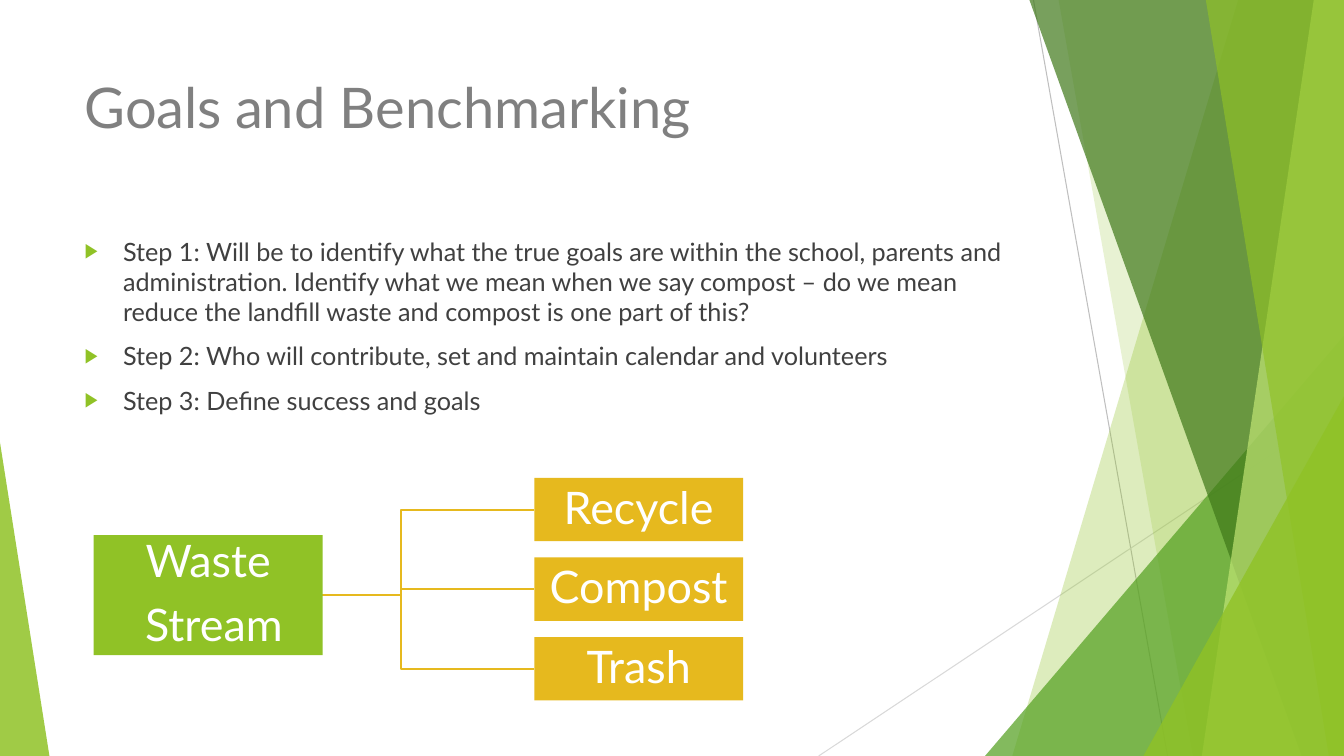
from dataclasses import dataclass

from lxml.etree import SubElement
from pptx import Presentation
from pptx.dml.color import RGBColor
from pptx.enum.shapes import MSO_CONNECTOR as Connector, MSO_SHAPE as Preset
from pptx.enum.text import MSO_ANCHOR as Anchor, MSO_AUTO_SIZE as AutoSize, PP_ALIGN as Align
from pptx.oxml.ns import qn
from pptx.shapes.autoshape import Shape
from pptx.slide import Slide
from pptx.text.text import TextFrame, _Paragraph as Paragraph
from pptx.util import Inches, Pt

FONT = "Lato"
WHITE = RGBColor(0xFF, 0xFF, 0xFF)
GREEN = RGBColor(0x90, 0xC2, 0x26)
MID_GREEN = RGBColor(0x54, 0xA0, 0x21)
DARK_GREEN = RGBColor(0x3F, 0x78, 0x19)
PALE_GREEN = RGBColor(0xC0, 0xE4, 0x74)
GOLD = RGBColor(0xE6, 0xB9, 0x1E)
TITLE_GRAY = RGBColor(0x80, 0x80, 0x80)
TEXT_GRAY = RGBColor(0x40, 0x40, 0x40)
LINE_GRAY = RGBColor(0xBF, 0xBF, 0xBF)
LIGHT_GRAY = RGBColor(0xD9, 0xD9, 0xD9)

WIDTH, HEIGHT = 13.33, 7.5
Point = tuple[float, float]


@dataclass(frozen=True)
class Ray:
    start: Point
    end: Point
    color: RGBColor


@dataclass(frozen=True)
class Band:
    """A facet from the top edge to the bottom edge, bounded by the right edge."""
    top_x: float
    bottom_x: float
    color: RGBColor
    opacity: int


@dataclass(frozen=True)
class Corner:
    """A right triangle on the bottom edge; apex 0 is left, 1 is right."""
    left: float
    top: float
    width: float
    apex: int
    color: RGBColor
    opacity: int


@dataclass(frozen=True)
class Box:
    left: float
    top: float
    width: float
    height: float
    color: RGBColor
    lines: tuple[str, ...]


RAYS = [
    Ray((10.25, 0), (11.58, HEIGHT), LINE_GRAY),
    Ray((WIDTH, 4.03), (8.12, HEIGHT), LIGHT_GRAY),
]
FACETS = [
    Band(12.28, 10.04, GREEN, 30),
    Band(10.5, 11.83, GREEN, 20),
    Corner(9.77, 3.33, 3.56, 1, MID_GREEN, 72),
    Band(10.21, 12.91, DARK_GREEN, 70),
    Band(13.03, 11.92, PALE_GREEN, 70),
    Band(11.96, 13.18, GREEN, 65),
    Corner(11.34, 3.93, 1.99, 1, GREEN, 80),
    Corner(0, 4.39, 0.49, 0, GREEN, 85),
]
TITLE_RUNS = [("Goals", 40, TITLE_GRAY), (" ", 36, GREEN), ("and Benchmarking", 40, TITLE_GRAY)]
STEPS = [
    "Step 1: Will be to identify what the true goals are within the school, parents and "
    "administration. Identify what we mean when we say compost – do we mean reduce the "
    "landfill waste and compost is one part of this?",
    "Step 2: Who will contribute, set and maintain calendar and volunteers",
    "Step 3: Define success and goals",
]
WASTE_STREAM = Box(0.93, 5.31, 2.27, 1.19, GREEN, ("Waste", " Stream"))
DESTINATIONS = [
    Box(5.3, 4.74 + 0.79 * index, 2.07, 0.63, GOLD, (name,))
    for index, name in enumerate(("Recycle", "Compost", "Trash"))
]


def add_run(paragraph: Paragraph, text: str, size: float, color: RGBColor) -> None:
    run = paragraph.add_run()
    run.text = text
    run.font.name = FONT
    run.font.size = Pt(size)
    run.font.color.rgb = color


def next_paragraph(frame: TextFrame, index: int) -> Paragraph:
    return frame.add_paragraph() if index else frame.paragraphs[0]


def paint(shape: Shape, color: RGBColor, opacity: int = 100) -> None:
    shape.shadow.inherit = False
    shape.line.fill.background()
    shape.fill.solid()
    shape.fill.fore_color.rgb = color
    if opacity < 100:
        fill_color = next(shape._element.spPr.iter(qn("a:srgbClr")))
        SubElement(fill_color, qn("a:alpha"), val=str(opacity * 1000))


def add_outline(slide: Slide, points: list[Point], close: bool) -> Shape:
    start, *others = [(Inches(x), Inches(y)) for x, y in points]
    builder = slide.shapes.build_freeform(*start)
    builder.add_line_segments(others, close=close)
    return builder.convert_to_shape()


def add_ray(slide: Slide, ray: Ray) -> None:
    ends = [Inches(value) for value in (*ray.start, *ray.end)]
    line = slide.shapes.add_connector(Connector.STRAIGHT, *ends)
    line.line.color.rgb = ray.color
    line.line.width = Pt(0.75)
    SubElement(line._element.spPr, qn("a:effectLst"))


def add_facet(slide: Slide, facet: Band | Corner) -> None:
    if isinstance(facet, Band):
        points = [(facet.top_x, 0), (WIDTH, 0), (WIDTH, HEIGHT), (facet.bottom_x, HEIGHT)]
        shape = add_outline(slide, points, close=True)
    else:
        shape = slide.shapes.add_shape(
            Preset.ISOSCELES_TRIANGLE, Inches(facet.left), Inches(facet.top),
            Inches(facet.width), Inches(HEIGHT - facet.top))
        shape.adjustments[0] = facet.apex
    paint(shape, facet.color, facet.opacity)


def place(shape: Shape, left: float, top: float, width: float, height: float) -> TextFrame:
    """Move a placeholder and return its top-anchored text frame."""
    shape.left, shape.top = Inches(left), Inches(top)
    shape.width, shape.height = Inches(width), Inches(height)
    frame = shape.text_frame
    frame.word_wrap = True
    frame.auto_size = AutoSize.NONE
    frame.vertical_anchor = Anchor.TOP
    return frame


def add_bullet(paragraph: Paragraph) -> None:
    properties = paragraph._p.get_or_add_pPr()
    properties.set("marL", str(Inches(0.38)))
    properties.set("indent", str(Inches(-0.38)))
    bullet_color = SubElement(properties, qn("a:buClr"))
    SubElement(bullet_color, qn("a:srgbClr"), val=str(GREEN))
    SubElement(properties, qn("a:buSzPct"), val="80000")
    SubElement(properties, qn("a:buChar"), char="▶")


def add_branch(slide: Slide, target: Box) -> None:
    start_y = WASTE_STREAM.top + WASTE_STREAM.height / 2
    end_y = target.top + target.height / 2
    points = [(2.66, start_y), (3.98, start_y), (3.98, end_y), (target.left, end_y)]
    branch = add_outline(slide, points, close=False)
    branch.shadow.inherit = False
    branch.fill.background()
    branch.line.color.rgb = GOLD
    branch.line.width = Pt(1.5)


def add_box(slide: Slide, box: Box) -> None:
    shape = slide.shapes.add_shape(
        Preset.RECTANGLE, Inches(box.left), Inches(box.top), Inches(box.width), Inches(box.height))
    paint(shape, box.color)
    frame = shape.text_frame
    frame.word_wrap = True
    frame.vertical_anchor = Anchor.MIDDLE
    frame.margin_left = frame.margin_right = Inches(0.02)
    frame.margin_top = frame.margin_bottom = Inches(0.02)
    for index, text in enumerate(box.lines):
        paragraph = next_paragraph(frame, index)
        paragraph.alignment = Align.CENTER
        paragraph.line_spacing = 0.9
        paragraph.space_after = Pt(11.2)
        add_run(paragraph, text, 32, WHITE)


def main() -> None:
    presentation = Presentation()
    presentation.slide_width, presentation.slide_height = Inches(WIDTH), Inches(HEIGHT)
    slide = presentation.slides.add_slide(presentation.slide_layouts[1])
    for ray in RAYS:
        add_ray(slide, ray)
    for facet in FACETS:
        add_facet(slide, facet)

    title = place(slide.shapes.title, 0.74, 0.67, 9.4, 1.44).paragraphs[0]
    title.alignment = Align.LEFT
    for text, size, color in TITLE_RUNS:
        add_run(title, text, size, color)
    body = place(slide.placeholders[1], 0.74, 2.29, 9.4, 4.32)
    for index, step in enumerate(STEPS):
        paragraph = next_paragraph(body, index)
        paragraph.space_before = Pt(10)
        add_bullet(paragraph)
        add_run(paragraph, step, 18, TEXT_GRAY)

    for destination in DESTINATIONS:
        add_branch(slide, destination)
    for box in (WASTE_STREAM, *DESTINATIONS):
        add_box(slide, box)
    presentation.save("out.pptx")


if __name__ == "__main__":
    main()
